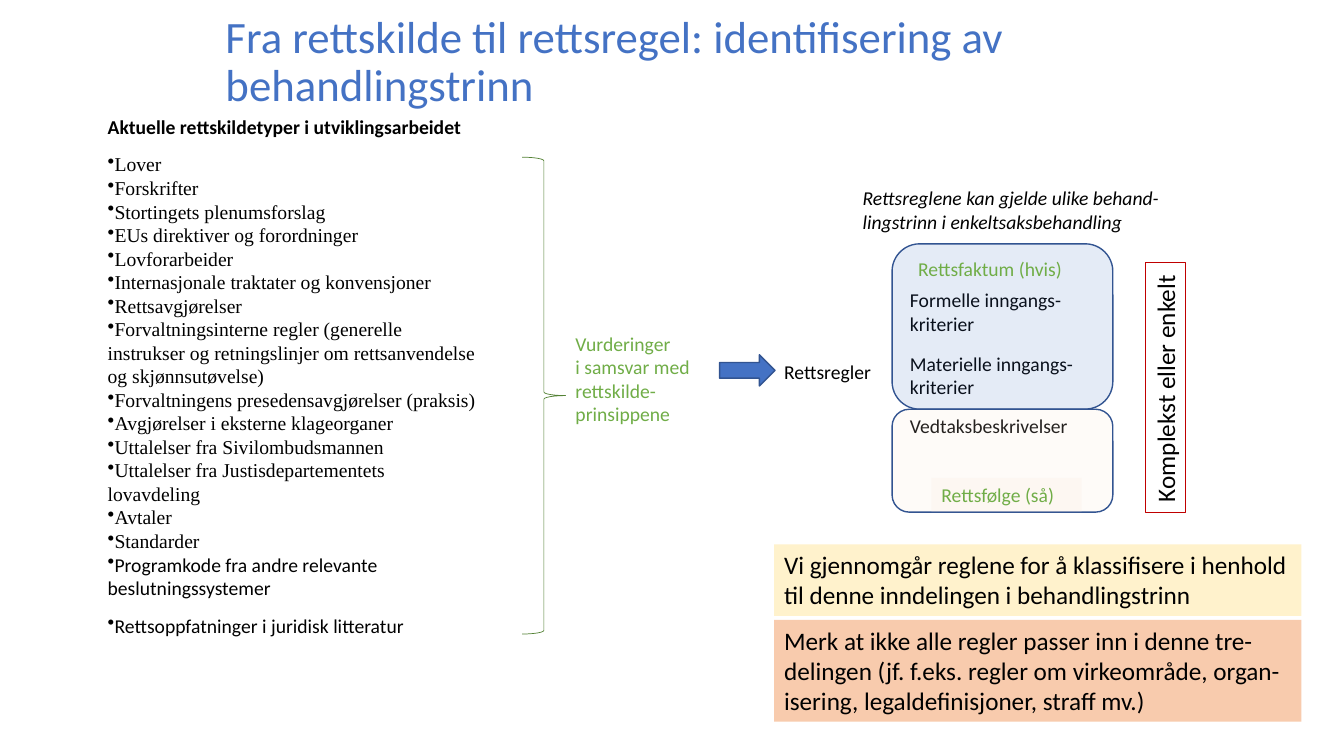
from dataclasses import dataclass
from lxml.etree import SubElement
from pptx import Presentation
from pptx.dml.color import RGBColor
from pptx.enum.shapes import MSO_SHAPE
from pptx.enum.text import MSO_ANCHOR, MSO_AUTO_SIZE
from pptx.oxml.ns import qn
from pptx.util import Pt


@dataclass(frozen=True)
class Theme:
    blue: str = "4472C4"
    navy: str = "325491"
    green: str = "70AD47"
    moss: str = "548235"
    black: str = "000000"
    white: str = "FFFFFF"
    red: str = "C00000"
    peach: str = "FBE5D6"
    cream: str = "FFF2CC"
    salmon: str = "F8CBAD"
    sans: str = "Calibri"
    serif: str = "Times New Roman"
    head: int = 32
    note: int = 18
    body: int = 14


T = Theme()


# Shared parts
def put(para, text, color=T.black, **form):
    run = para.add_run()
    run.text = text
    form = {"name": T.sans, "size": T.body, **form}
    form["size"] = Pt(form["size"])
    for key, value in form.items():
        setattr(run.font, key, value)
    run.font.color.rgb = RGBColor.from_string(color)


def write(shape, lines, wrap=True, **form):
    frame = shape.text_frame
    frame.word_wrap = wrap
    frame.auto_size = MSO_AUTO_SIZE.SHAPE_TO_FIT_TEXT
    for i, line in enumerate(lines):
        para = frame.add_paragraph() if i else frame.paragraphs[0]
        put(para, line, **form)
    return frame


def label(slide, box, lines, wrap=False, **form):
    shape = slide.shapes.add_textbox(*map(Pt, box))
    return write(shape, lines, wrap, **form)


def draw(slide, kind, box, fill=None, alpha=None, line=None, width=1):
    shape = slide.shapes.add_shape(kind, *map(Pt, box))
    shape.shadow.inherit = False
    shape.text_frame.vertical_anchor = MSO_ANCHOR.TOP
    if fill:
        shape.fill.solid()
        shape.fill.fore_color.rgb = RGBColor.from_string(fill)
        if alpha:
            tint = shape.fill._xPr.find(".//" + qn("a:srgbClr"))
            SubElement(tint, qn("a:alpha"), val=str(alpha * 1000))
    else:
        shape.fill.background()
    if line:
        shape.line.color.rgb = RGBColor.from_string(line)
        shape.line.width = Pt(width)
    else:
        shape.line.fill.background()
    return shape


def panel(slide, box, lines, fill=None, alpha=None, line=None, width=1,
          wrap=True, **form):
    shape = draw(slide, MSO_SHAPE.RECTANGLE, box, fill, alpha, line, width)
    write(shape, lines, wrap, **form)
    for para in shape.text_frame.paragraphs:
        para.alignment = 1
    return shape


# Heading
def title(slide, box, text):
    frame = label(slide, box, [text], True, size=T.head, color=T.blue)
    frame.auto_size = MSO_AUTO_SIZE.NONE
    frame.vertical_anchor = MSO_ANCHOR.MIDDLE
    frame.paragraphs[0].line_spacing = 0.9


# List of legal sources
def sources(slide, box, head, laws, extras):
    shape = panel(slide, box, [head], T.white, bold=True)
    frame = shape.text_frame
    frame.auto_size = MSO_AUTO_SIZE.NONE
    frame.paragraphs[0].space_after = Pt(10)
    items = [(law, T.serif, 0) for law in laws]
    items += [(extra, T.sans, 10) for extra in extras]
    for text, face, gap in items:
        para = frame.add_paragraph()
        para.alignment = 1
        para.space_after = Pt(gap)
        props = para._p.get_or_add_pPr()
        SubElement(props, qn("a:buChar"), char="•")
        put(para, text, name=face)


# Brace, method and arrow that lead to the rules
def method(slide, box):
    x, y, wide, high = box
    draw(slide, MSO_SHAPE.RIGHT_BRACE, (x, y, 31, high), line=T.moss, width=0.5)
    steps = ["Vurderinger", "i samsvar med", "rettskilde-", "prinsippene"]
    label(slide, (x + 31, y + 121, 105.8, 78.5), steps, color=T.green)
    draw(slide, MSO_SHAPE.RIGHT_ARROW, (x + 141, y + 141.1, 39.6, 22.3),
         T.blue, line=T.navy)
    label(slide, (x + wide - 77.8, y + 141.1, 77.8, 24.5), ["Rettsregler"])


# Rule model: facts above, effects below
def rules(slide, box):
    x, y, wide, high = box
    label(slide, (x, y, 233.3, 41),
          ["Rettsreglene kan gjelde ulike behand-",
           "lingstrinn i enkeltsaksbehandling"], True, italic=True)
    left, top, span, split = x + 28.1, y + 44.6, 157.7, y + 162.7
    for at, width, lines in (
            (y + 72.7, 123.8, ["Formelle inngangs-", "kriterier"]),
            (y + 118.1, 132.5, ["Materielle inngangs-", "kriterier"]),
            (split, 128.9, ["Vedtaksbeskrivelser"])):
        label(slide, (left + 5.7, at, width, 17 * len(lines) + 7.2), lines)
    draw(slide, MSO_SHAPE.ROUNDED_RECTANGLE, (left, top, span, split - top),
         T.blue, 14, T.navy)
    label(slide, (left + 11.5, top + 5.8, 118.8, 24.5),
          ["Rettsfaktum (hvis)"], color=T.green)
    draw(slide, MSO_SHAPE.ROUNDED_RECTANGLE,
         (left, split, span, y + high - split), T.peach, 15, T.navy)
    panel(slide, (left + 28.1, y + high - 24.5, 107.3, 24.5),
          ["Rettsfølge (så)"], T.peach, 15, color=T.green)
    # Upright label, turned about its centre at the right edge
    long, thick = 178.6, 28.8
    spot = (x + wide - (long + thick) / 2,
            y + high - (long + thick) / 2, long, thick)
    side = panel(slide, spot, ["Komplekst eller enkelt"], line=T.red,
                 width=0.75, wrap=False, size=T.note)
    side.rotation = 270


# Coloured remarks
def notes(slide, box):
    x, y, wide, high = box
    panel(slide, (x, y, wide, 51.1),
          ["Vi gjennomgår reglene for å klassifisere i henhold "
           "til denne inndelingen i behandlingstrinn"],
          T.cream, size=T.note)
    panel(slide, (x, y + high - 72.7, wide, 72.7),
          ["Merk at ikke alle regler passer inn i denne tre-",
           "delingen (jf. f.eks. regler om virkeområde, organ-",
           "isering, legaldefinisjoner, straff mv.)"],
          T.salmon, size=T.note)


LAWS = [
    "Lover", "Forskrifter", "Stortingets plenumsforslag",
    "EUs direktiver og forordninger", "Lovforarbeider",
    "Internasjonale traktater og konvensjoner", "Rettsavgjørelser",
    "Forvaltningsinterne regler (generelle instrukser og retningslinjer "
    "om rettsanvendelse og skjønnsutøvelse)",
    "Forvaltningens presedensavgjørelser (praksis)",
    "Avgjørelser i eksterne klageorganer", "Uttalelser fra Sivilombudsmannen",
    "Uttalelser fra Justisdepartementets lovavdeling", "Avtaler", "Standarder",
]
EXTRAS = ["Programkode fra andre relevante beslutningssystemer",
          "Rettsoppfatninger i juridisk litteratur"]


def main():
    deck = Presentation()
    deck.slide_width, deck.slide_height = Pt(960), Pt(540)
    slide = deck.slides.add_slide(deck.slide_layouts[6])
    title(slide, (154, 0, 648, 90),
          "Fra rettskilde til rettsregel: identifisering av behandlingstrinn")
    sources(slide, (69.8, 78.5, 281.5, 394.6),
            "Aktuelle rettskildetyper i utviklingsarbeidet", LAWS, EXTRAS)
    method(slide, (373, 112.3, 257.8, 340.6))
    rules(slide, (609.1, 129.6, 237.6, 236.2))
    notes(slide, (553, 388.8, 376.6, 126.7))
    deck.save("out.pptx")


if __name__ == "__main__":
    main()
